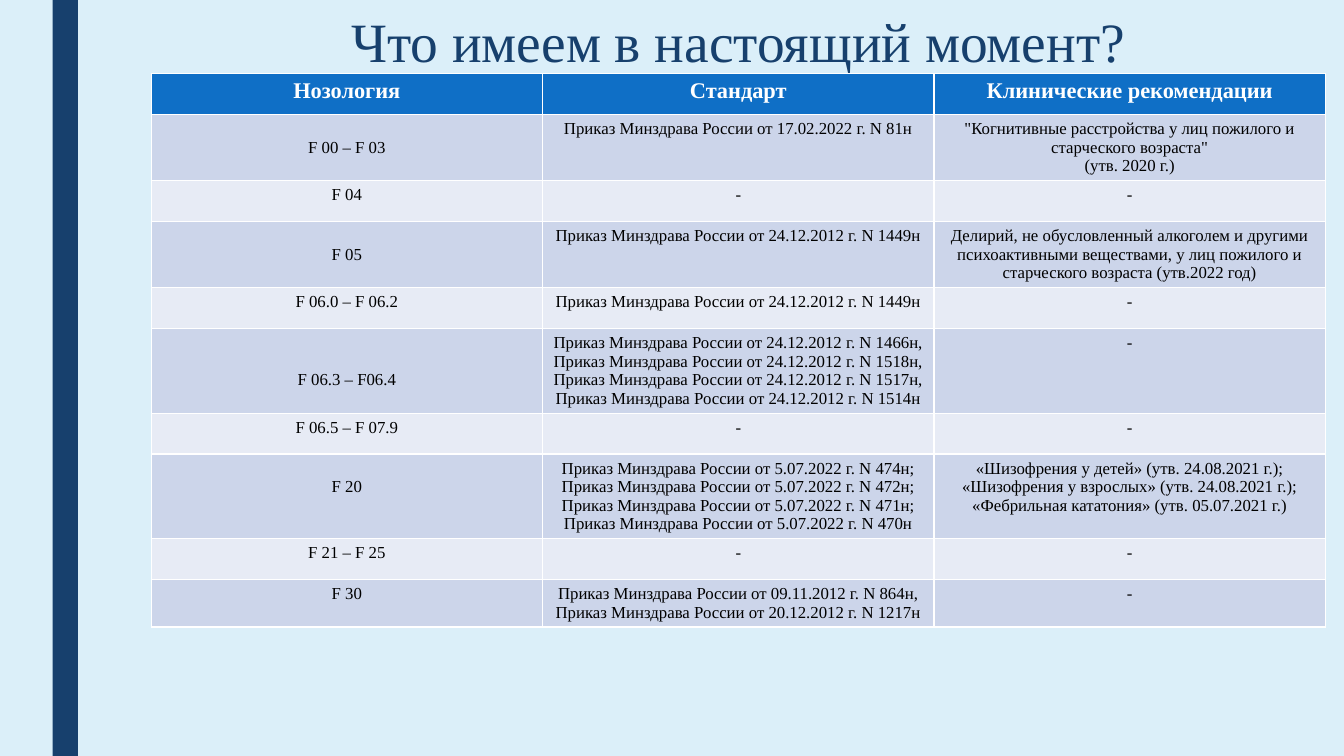
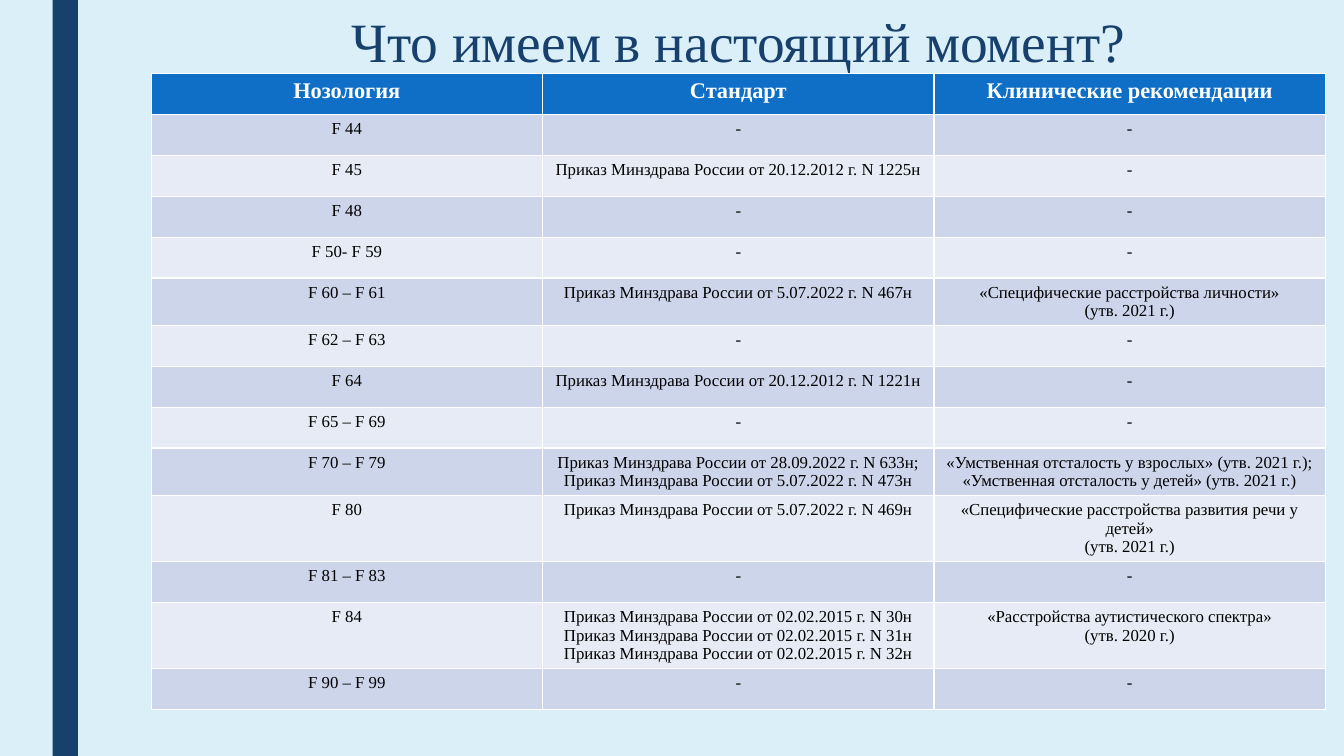
from pptx import Presentation
from pptx.dml.color import RGBColor
from pptx.enum.shapes import MSO_SHAPE
from pptx.enum.text import MSO_ANCHOR, MSO_AUTO_SIZE, PP_ALIGN
from pptx.util import Pt

RECT = MSO_SHAPE.RECTANGLE
MIDDLE = MSO_ANCHOR.MIDDLE
NO_FIT = MSO_AUTO_SIZE.NONE
CENTER = PP_ALIGN.CENTER

# Shared style
FONT = "Times New Roman"
NAVY, BLUE, SKY = "17406D", "0F6FC6", "DBEFF9"
WHITE, BLACK = "FFFFFF", "000000"
ROW_FILLS = ("E7EBF5", "CCD5EA")  # even rows, odd rows
LEFT, WIDTH = 108, 838.8
TABLE_TOP, ROW_H = 52.6, 29.2
CELL_TOP, LINE_H = 3.6, 13.3


def orders(*items, sep="; "):
    return sep.join(f"Приказ Минздрава России от {item}" for item in items)


# Content: diagnosis, standard, clinical guideline; \n starts a paragraph
TITLE = "Что имеем в настоящий момент?"
HEADER = ("Нозология", "Стандарт", "Клинические рекомендации")
SLIDES = [
    {"height": 412.6, "rows": [
        ("F 00 – F 03", orders("17.02.2022 г. N 81н"),
         "\"Когнитивные расстройства у лиц пожилого и старческого возраста\"\n"
         "(утв. 2020 г.)"),
        ("F 04", "-", "-"),
        ("F 05", orders("24.12.2012 г. N 1449н"),
         "Делирий, не обусловленный алкоголем и другими психоактивными "
         "веществами, у лиц пожилого и старческого возраста (утв.2022 год)"),
        ("F 06.0 – F 06.2", orders("24.12.2012 г. N 1449н"), "-"),
        ("F 06.3 – F06.4",
         orders("24.12.2012 г. N 1466н", "24.12.2012 г. N 1518н",
                "24.12.2012 г. N 1517н", "24.12.2012 г. N 1514н", sep=", "),
         "-"),
        ("F 06.5 – F 07.9", "-", "-"),
        ("F 20",
         orders("5.07.2022 г. N 474н", "5.07.2022 г. N 472н",
                "5.07.2022 г. N 471н", "5.07.2022 г. N 470н"),
         "«Шизофрения у детей» (утв. 24.08.2021 г.); "
         "«Шизофрения у взрослых» (утв. 24.08.2021 г.); "
         "«Фебрильная кататония» (утв. 05.07.2021 г.)"),
        ("F 21 – F 25", "-", "-"),
        ("F 30",
         orders("09.11.2012 г. N 864н", "20.12.2012 г. N 1217н", sep=", "),
         "-"),
    ]},
    {"height": 465.1, "rows": [
        ("F 44", "-", "-"),
        ("F 45", orders("20.12.2012 г. N 1225н"), "-"),
        ("F 48", "-", "-"),
        ("F 50- F 59", "-", "-"),
        ("F 60 – F 61", orders("5.07.2022 г. N 467н"),
         "«Специфические расстройства личности»\n(утв. 2021 г.)"),
        ("F 62 – F 63", "-", "-"),
        ("F 64", orders("20.12.2012 г. N 1221н"), "-"),
        ("F 65 – F 69", "-", "-"),
        ("F 70 – F 79",
         orders("28.09.2022 г. N 633н", "5.07.2022 г. N 473н"),
         "«Умственная отсталость у взрослых» (утв. 2021 г.); "
         "«Умственная отсталость у детей» (утв. 2021 г.)"),
        ("F 80", orders("5.07.2022 г. N 469н"),
         "«Специфические расстройства развития речи у детей»\n"
         "(утв. 2021 г.)"),
        ("F 81 – F 83", "-", "-"),
        ("F 84",
         orders("02.02.2015 г. N 30н", "02.02.2015 г. N 31н",
                "02.02.2015 г. N 32н", sep="\n"),
         "«Расстройства аутистического спектра»\n(утв. 2020 г.)"),
        ("F 90 – F 99", "-", "-"),
    ]},
]
# Lines by which a diagnosis sits lower in its cell
LOWERED = {"F 00 – F 03": 1, "F 05": 1, "F 06.3 – F06.4": 2, "F 20": 1}


def paint(fill, color):
    fill.solid()
    fill.fore_color.rgb = RGBColor.from_string(color)


def set_text(tf, text, size, color, bold=False):
    tf.text = text
    for p in tf.paragraphs:
        p.alignment = CENTER
        for r in p.runs:
            r.font.name = FONT
            r.font.size = Pt(size)
            r.font.bold = bold
            r.font.color.rgb = RGBColor.from_string(color)


def add_title(s):
    sp = s.shapes.title
    sp.left, sp.top, sp.width, sp.height = Pt(LEFT), Pt(5), Pt(WIDTH), Pt(54)
    tf = sp.text_frame
    tf.auto_size = NO_FIT
    tf.vertical_anchor = MIDDLE
    set_text(tf, TITLE, 39.6, NAVY)
    tf.paragraphs[0].line_spacing = 0.89


def add_standards_table(s, rows, height):
    rows = [HEADER] + rows
    frame = s.shapes.add_table(len(rows), len(HEADER), Pt(LEFT), Pt(TABLE_TOP),
                               Pt(WIDTH), Pt(height))
    table = frame.table
    for i, texts in enumerate(rows):
        table.rows[i].height = Pt(ROW_H)
        for j, text in enumerate(texts):
            cell = table.cell(i, j)
            if i == 0:
                paint(cell.fill, BLUE)
                set_text(cell.text_frame, text, 16, WHITE, bold=True)
            else:
                paint(cell.fill, ROW_FILLS[i % 2])
                set_text(cell.text_frame, text, 12, BLACK)
                if text in LOWERED:
                    cell.margin_top = Pt(CELL_TOP + LINE_H * LOWERED[text])
    frame.height = Pt(height)


def add_master_band(prs):
    # Drawn on a slide, then moved behind everything on the master
    sp = prs.slides[0].shapes.add_shape(RECT, Pt(37.6), 0, Pt(18),
                                        prs.slide_height)
    sp.shadow.inherit = False
    paint(sp.fill, NAVY)
    sp.line.fill.background()
    prs.slide_master.shapes.element.insert(2, sp.element)


def main():
    prs = Presentation()
    prs.slide_width, prs.slide_height = Pt(960), Pt(540)
    paint(prs.slide_master.background.fill, SKY)
    for content in SLIDES:
        s = prs.slides.add_slide(prs.slide_layouts.get_by_name("Title Only"))
        add_title(s)
        add_standards_table(s, content["rows"], content["height"])
    add_master_band(prs)
    prs.save("out.pptx")


if __name__ == "__main__":
    main()
